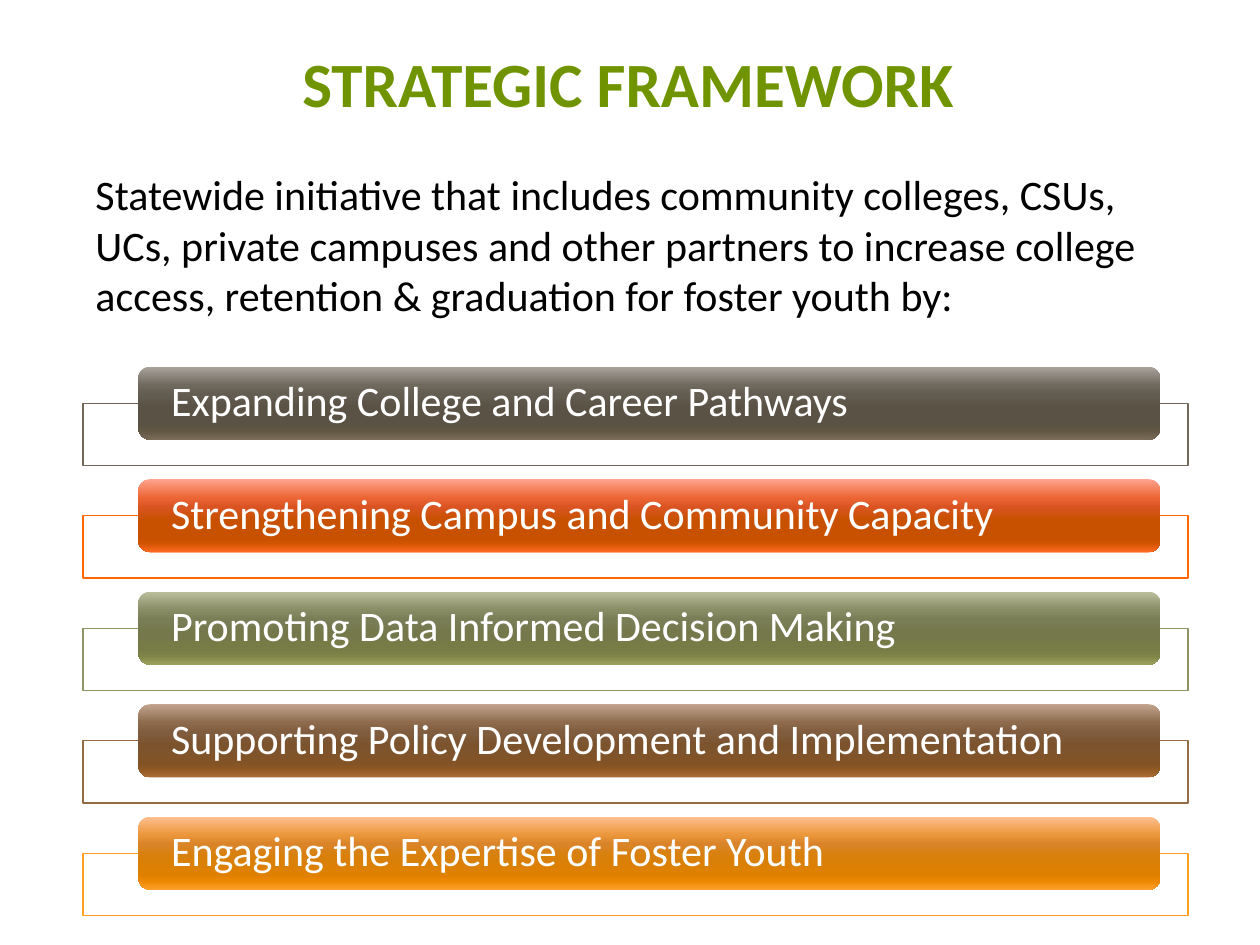
from dataclasses import dataclass

from lxml import etree
from pptx import Presentation
from pptx.dml.color import RGBColor
from pptx.enum.shapes import MSO_SHAPE
from pptx.enum.text import MSO_ANCHOR, PP_ALIGN
from pptx.oxml.ns import qn
from pptx.util import Pt

RECT, ROUND_RECT = MSO_SHAPE.RECTANGLE, MSO_SHAPE.ROUNDED_RECTANGLE
MIDDLE, TOP = MSO_ANCHOR.MIDDLE, MSO_ANCHOR.TOP
LEFT, CENTER = PP_ALIGN.LEFT, PP_ALIGN.CENTER


@dataclass(frozen=True)
class Theme:
    """Colours, font and type sizes of the slide."""
    font: str = "Calibri"
    title_size: int = 36
    body_size: int = 24
    title: str = "6F9400"
    ink: str = "000000"
    white: str = "FFFFFF"
    stops: tuple = (0, 25, 38, 55, 80, 88, 100)


THEME = Theme()

INTRO = ("Statewide initiative that includes community colleges, CSUs, UCs, "
         "private campuses and other partners to increase college access, "
         "retention & graduation for foster youth by:")

GOALS = [
    ("Expanding College and Career Pathways", "71685A",
     "AAA49D 70695E 635C51 5A5245 5C5242 625644 7A6C58"),
    ("Strengthening Campus and Community Capacity", "FF6700",
     "FFA490 EC6635 DA5423 C85100 C65000 D15400 FF6A22"),
    ("Promoting Data Informed Decision Making", "909465",
     "BBBF9D 898D66 7A7E57 74784B 777B46 7F8547 9CA25C"),
    ("Supporting Policy Development and Implementation", "956B43",
     "C2A48F 8E6B4D 815D40 7B542E 825326 8E5723 AC6D33"),
    ("Engaging the Expertise of Foster Youth", "FEA022",
     "FFC091 EB963A D98428 D88009 E08000 EC8700 FFA12D"),
]


def rgb(value):
    """Turn a hex string into a colour."""
    return RGBColor.from_string(value)


def write(sp, text, size, color, bold=False, align=LEFT, anchor=TOP):
    """Put one paragraph into a shape and return the paragraph."""
    tf = sp.text_frame
    tf.word_wrap = True
    tf.vertical_anchor = anchor
    p = tf.paragraphs[0]
    p.text = text
    p.alignment = align
    p.font.name = THEME.font
    p.font.size = Pt(size)
    p.font.bold = bold
    p.font.color.rgb = rgb(color)
    return p


def fill_gradient(sp, colors):
    """Fill a shape from top to bottom with the theme's gradient stops."""
    sp.fill.gradient()
    grad = sp.element.spPr.find(qn("a:gradFill"))
    for child in list(grad):
        grad.remove(child)
    stops = etree.SubElement(grad, qn("a:gsLst"))
    for pos, color in zip(THEME.stops, colors):
        stop = etree.SubElement(stops, qn("a:gs"), pos=str(pos * 1000))
        etree.SubElement(stop, qn("a:srgbClr"), val=color)
    etree.SubElement(grad, qn("a:lin"), ang="5400000", scaled="0")


def add_title(s, x, y, w, h):
    """Place the slide title in its box."""
    sp = s.shapes.add_textbox(Pt(x), Pt(y), Pt(w), Pt(h))
    write(sp, "STRATEGIC FRAMEWORK", THEME.title_size, THEME.title,
          bold=True, align=CENTER, anchor=MIDDLE)


def add_intro(s, x, y, w, h):
    """Place the introductory sentence in its box."""
    sp = s.shapes.add_textbox(Pt(x), Pt(y), Pt(w), Pt(h))
    write(sp, INTRO, THEME.body_size, THEME.ink)


def add_goal(s, x, y, w, h, goal):
    """Place one goal: an outlined frame with a gradient bar over its top."""
    text, line, colors = goal
    bar_h = 41.8
    frame_y = y + bar_h / 2
    frame = s.shapes.add_shape(RECT, Pt(x), Pt(frame_y), Pt(w), Pt(y + h - frame_y))
    frame.shadow.inherit = False
    frame.fill.solid()
    frame.fill.fore_color.rgb = rgb(THEME.white)
    frame.line.color.rgb = rgb(line)
    frame.line.width = Pt(0.75)

    bar = s.shapes.add_shape(ROUND_RECT, Pt(x + w * 0.05), Pt(y),
                             Pt(w * 0.925), Pt(bar_h))
    bar.shadow.inherit = False
    bar.line.fill.background()
    fill_gradient(bar, colors.split())
    p = write(bar, text, THEME.body_size, THEME.white, anchor=MIDDLE)
    p.line_spacing = 0.9
    tf = bar.text_frame
    tf.margin_left = tf.margin_right = Pt(16.7)
    tf.margin_top = tf.margin_bottom = 0


def add_goals(s, x, y, w, h):
    """Stack the goals in the box with equal gaps."""
    gap = 7.8
    goal_h = (h + gap) / len(GOALS) - gap
    for i, goal in enumerate(GOALS):
        add_goal(s, x, y + i * (goal_h + gap), w, goal_h, goal)


def main():
    """Build the slide and save it."""
    prs = Presentation()
    prs.slide_width, prs.slide_height = Pt(720), Pt(540)
    s = prs.slides.add_slide(prs.slide_layouts[6])
    add_goals(s, 47.5, 209.5, 631.4, 313.7)
    add_title(s, 34, 18, 650, 57.6)
    add_intro(s, 47.5, 93, 631.4, 124)
    prs.save("out.pptx")


if __name__ == "__main__":
    main()
